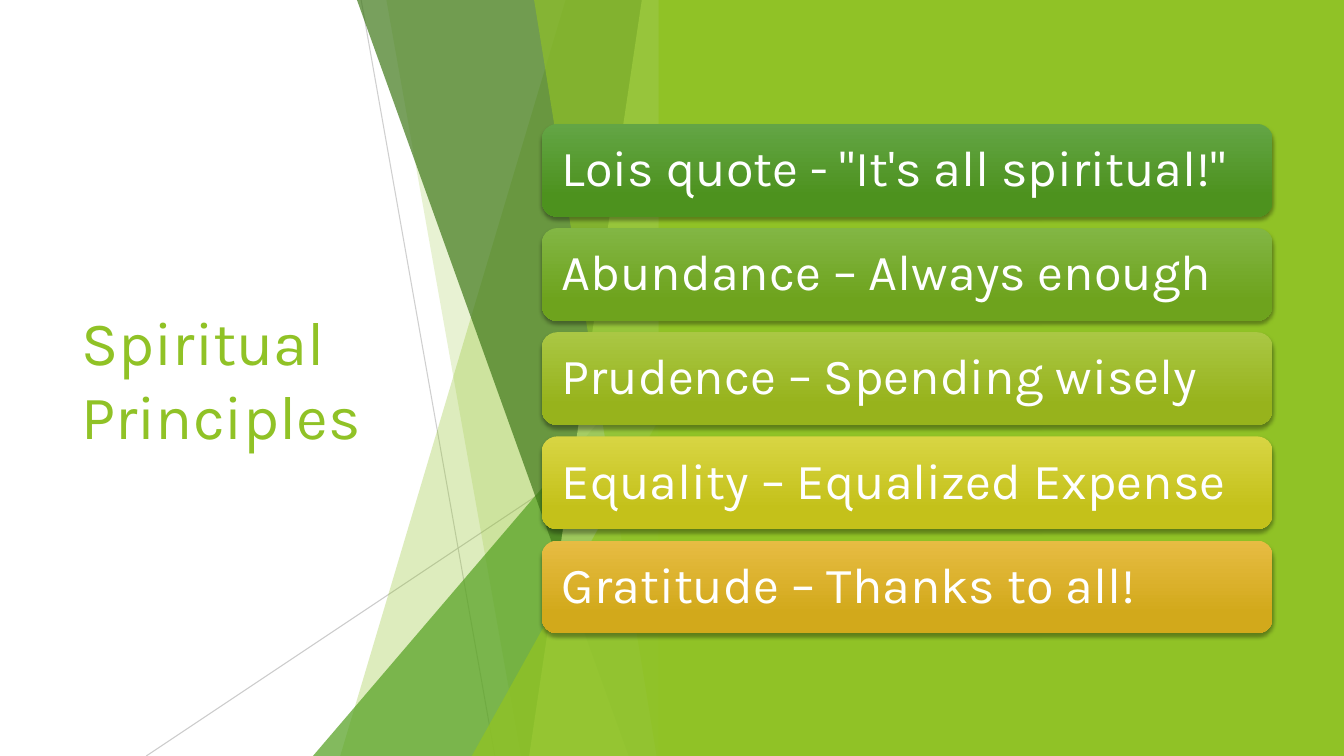
from lxml import etree
from pptx import Presentation
from pptx.dml.color import RGBColor
from pptx.enum import shapes, text
from pptx.oxml import ns
from pptx.util import Pt

COLORS = {
    "white": "FFFFFF", "thread": "BFBFBF", "lime": "90C226",
    "green": "54A021", "forest": "3F7819", "pale": "C0E474",
}
WIDTH, HEIGHT = 960, 540
FACET_RIGHT = 480


def set_alpha(item, percent):
    for color in item._element.iter(ns.qn("a:srgbClr")):
        etree.SubElement(color, ns.qn("a:alpha"), val=str(percent * 1000))


def add_words(frame, words, size, color):
    frame.word_wrap = True
    frame.vertical_anchor = text.MSO_ANCHOR.MIDDLE
    paragraph = frame.paragraphs[0]
    paragraph.alignment = text.PP_ALIGN.LEFT
    run = paragraph.add_run()
    run.text = words
    run.font.name = "Karla"
    run.font.size = Pt(size)
    run.font.color.rgb = RGBColor.from_string(COLORS[color])
    return paragraph


deck = Presentation()
deck.slide_width, deck.slide_height = Pt(WIDTH), Pt(HEIGHT)
slide = deck.slides.add_slide(deck.slide_layouts[6])

# Title
title = slide.shapes.add_textbox(Pt(51), Pt(108.5), Pt(279.5), Pt(322.5))
add_words(title.text_frame, "Spiritual Principles", 44, "lime")

# Thin crossing lines
for x1, y1, x2, alpha in [(258, 0, 353.5, 75), (479.5, 290, 104.5, 80)]:
    thread = slide.shapes.add_connector(
        shapes.MSO_CONNECTOR.STRAIGHT, Pt(x1), Pt(y1), Pt(x2), Pt(HEIGHT))
    thread.line.width = Pt(0.75)
    thread.line.color.rgb = RGBColor.from_string(COLORS["thread"])
    set_alpha(thread, alpha)
    etree.SubElement(thread._element.spPr, ns.qn("a:effectLst"))

# Facets: top y, left edge at top and at bottom, colour, opacity
facets = [
    (0, 404, 243, "lime", 30),
    (0, 276, 372, "lime", 20),
    (240, FACET_RIGHT, 223.5, "green", 72),
    (0, 255, 449, "forest", 70),
    (0, 458.5, 378, "pale", 70),
    (0, 381.5, 469, "lime", 65),
    (283, FACET_RIGHT, 337, "lime", 80),
]
for top, top_left, bottom_left, color, alpha in facets:
    if top_left == FACET_RIGHT:
        facet = slide.shapes.add_shape(
            shapes.MSO_SHAPE.ISOSCELES_TRIANGLE, Pt(bottom_left), Pt(top),
            Pt(FACET_RIGHT - bottom_left), Pt(HEIGHT - top))
        facet.adjustments[0] = 1
    else:
        outline = slide.shapes.build_freeform(Pt(top_left), Pt(top))
        outline.add_line_segments([
            (Pt(FACET_RIGHT), Pt(top)), (Pt(FACET_RIGHT), Pt(HEIGHT)),
            (Pt(bottom_left), Pt(HEIGHT))], close=True)
        facet = outline.convert_to_shape()
    facet.shadow.inherit = False
    facet.line.fill.background()
    facet.fill.solid()
    facet.fill.fore_color.rgb = RGBColor.from_string(COLORS[color])
    set_alpha(facet, alpha)

# Right panel
panel = slide.shapes.add_shape(
    shapes.MSO_SHAPE.RECTANGLE, Pt(470.5), 0, Pt(WIDTH - 470.5), Pt(HEIGHT))
panel.shadow.inherit = False
panel.line.fill.background()
panel.fill.solid()
panel.fill.fore_color.rgb = RGBColor.from_string(COLORS["lime"])

# Principles: wording, gradient from top to bottom
principles = [
    ("Lois quote - \"It's all spiritual!\"", "63A545", "4D921E"),
    ("Abundance – Always enough", "82B644", "6EA31D"),
    ("Prudence – Spending wisely", "AAC744", "97B31C"),
    ("Equality – Equalized Expense", "D8D543", "C4C11A"),
    ("Gratitude – Thanks to all!", "E7BC43", "D2A91B"),
]
for row, (words, light, dark) in enumerate(principles):
    bar = slide.shapes.add_shape(
        shapes.MSO_SHAPE.ROUNDED_RECTANGLE,
        Pt(387), Pt(88.5 + 74.4 * row), Pt(522), Pt(66.3))
    bar.line.fill.background()
    bar.fill.gradient()
    bar.fill.gradient_angle = 270
    for stop, position, color in zip(bar.fill.gradient_stops, (0, 0.78), (light, dark)):
        stop.position = position
        stop.color.rgb = RGBColor.from_string(color)

    bar.shadow.inherit = False
    effects = bar._element.spPr.find(ns.qn("a:effectLst"))
    shadow = etree.SubElement(
        effects, ns.qn("a:outerShdw"), blurRad=str(Pt(3)), dist=str(Pt(2)),
        dir="5400000", rotWithShape="0")
    shade = etree.SubElement(shadow, ns.qn("a:srgbClr"), val="000000")
    etree.SubElement(shade, ns.qn("a:alpha"), val="35000")

    frame = bar.text_frame
    frame.margin_left = frame.margin_right = Pt(11)
    add_words(frame, words, 36, "white").line_spacing = 0.9

deck.save("out.pptx")
